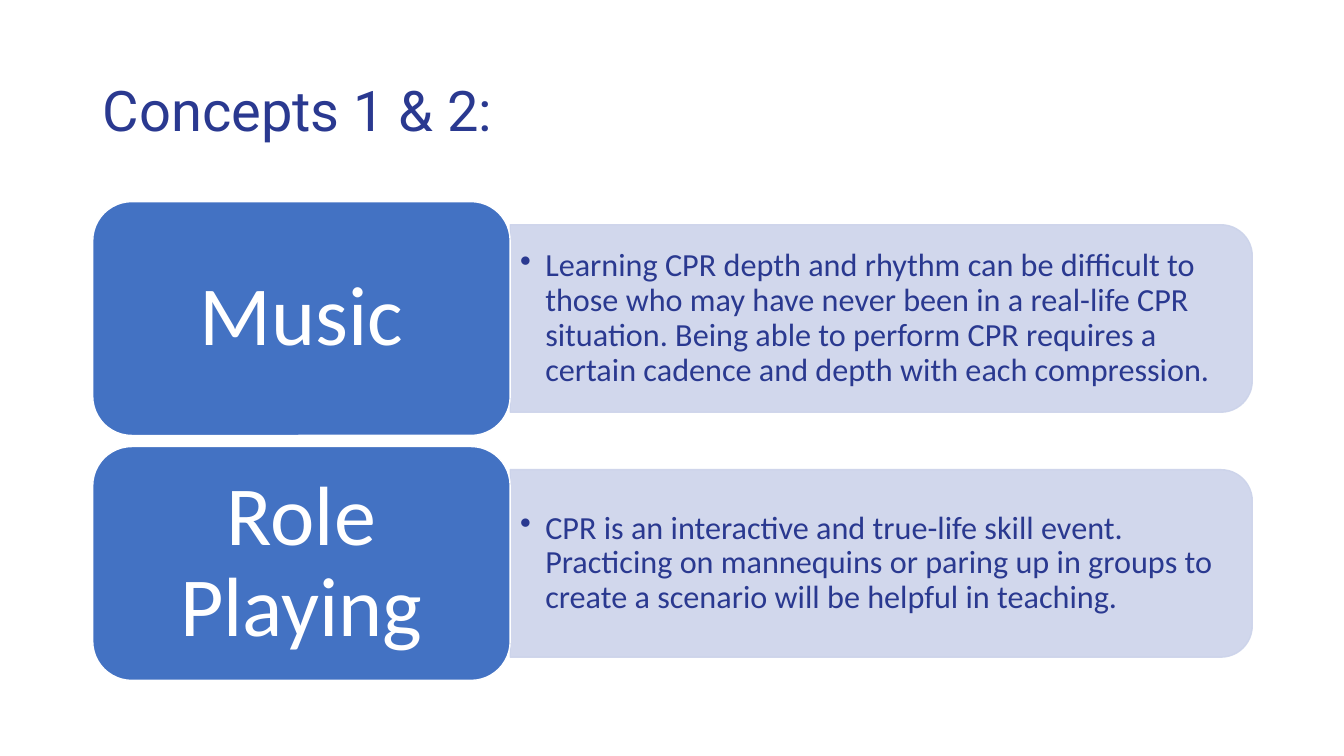
from lxml import etree
from pptx import Presentation, util as u
from pptx.dml.color import RGBColor
from pptx.enum import shapes, text
from pptx.oxml import ns

COLORS = {"navy": "2A3990", "blue": "4372C3", "pale": "CCD3EA", "white": "FFFFFF"}
CONCEPTS = [
    ("Music",
     "Learning CPR depth and rhythm can be difficult to those who may have never been "
     "in a real-life CPR situation. Being able to perform CPR requires a certain cadence "
     "and depth with each compression."),
    ("Role Playing",
     "CPR is an interactive and true-life skill event. Practicing on mannequins or paring "
     "up in groups to create a scenario will be helpful in teaching."),
]
ROW_TOP, ROW_PITCH, ROW_HEIGHT = 2, 2.43, 2.32
LABEL_LEFT, LABEL_WIDTH = 0.92, 4.14
PANEL_LEFT, PANEL_LENGTH, PANEL_HEIGHT = 5.06, 7.36, 1.86


def write(shape, words, size, color, font="Calibri", align=text.PP_ALIGN.LEFT,
          inset=(0.1, 0.05), bullet=False):
    frame = shape.text_frame
    frame.word_wrap = True
    frame.auto_size = text.MSO_AUTO_SIZE.NONE
    frame.vertical_anchor = text.MSO_ANCHOR.MIDDLE
    frame.margin_left = frame.margin_right = u.Inches(inset[0])
    frame.margin_top = frame.margin_bottom = u.Inches(inset[1])
    paragraph = frame.paragraphs[0]
    paragraph.alignment = align
    paragraph.line_spacing = 0.9
    run = paragraph.add_run()
    run.text = words
    run.font.name = font
    run.font.size = u.Pt(size)
    run.font.color.rgb = RGBColor.from_string(COLORS[color])
    if bullet:
        paragraph.level = 1
        properties = paragraph._p.get_or_add_pPr()
        properties.set("marL", str(u.Inches(0.25)))
        properties.set("indent", str(u.Inches(-0.25)))
        etree.SubElement(properties, ns.qn("a:buChar")).set("char", "•")


def paint(shape, fill, line, alpha=None):
    shape.shadow.inherit = False
    shape.fill.solid()
    shape.fill.fore_color.rgb = RGBColor.from_string(COLORS[fill])
    shape.line.color.rgb = RGBColor.from_string(COLORS[line])
    shape.line.width = u.Pt(1)
    if alpha:
        for color in shape._element.spPr.iter(ns.qn("a:srgbClr")):
            etree.SubElement(color, ns.qn("a:alpha")).set("val", str(alpha * 1000))


deck = Presentation()
deck.slide_width, deck.slide_height = u.Inches(13.33), u.Inches(7.5)
slide = deck.slides.add_slide(deck.slide_layouts[5])

heading = slide.shapes.title
heading.left, heading.top = u.Inches(0.92), u.Inches(0.4)
heading.width, heading.height = u.Inches(11.5), u.Inches(1.45)
write(heading, "Concepts 1 & 2:", 40, "navy", font="Roboto")

for row, (concept, explanation) in enumerate(CONCEPTS):
    top = ROW_TOP + row * ROW_PITCH
    middle = top + ROW_HEIGHT / 2

    panel = slide.shapes.add_shape(
        shapes.MSO_SHAPE.ROUND_2_SAME_RECTANGLE,
        u.Inches(PANEL_LEFT + (PANEL_LENGTH - PANEL_HEIGHT) / 2),
        u.Inches(middle - PANEL_LENGTH / 2),
        u.Inches(PANEL_HEIGHT), u.Inches(PANEL_LENGTH))
    panel.rotation = 90
    panel.adjustments[0], panel.adjustments[1] = 0.167, 0
    paint(panel, "pale", "pale", alpha=90)

    detail = slide.shapes.add_textbox(
        u.Inches(PANEL_LEFT), u.Inches(middle - 0.84), u.Inches(7.27), u.Inches(1.68))
    write(detail, explanation, 23, "navy", bullet=True)

    label = slide.shapes.add_shape(
        shapes.MSO_SHAPE.ROUNDED_RECTANGLE, u.Inches(LABEL_LEFT), u.Inches(top),
        u.Inches(LABEL_WIDTH), u.Inches(ROW_HEIGHT))
    label.adjustments[0] = 0.167
    paint(label, "blue", "white")
    write(label, concept, 60, "white", align=text.PP_ALIGN.CENTER, inset=(0.25, 0.12))

deck.save("out.pptx")
